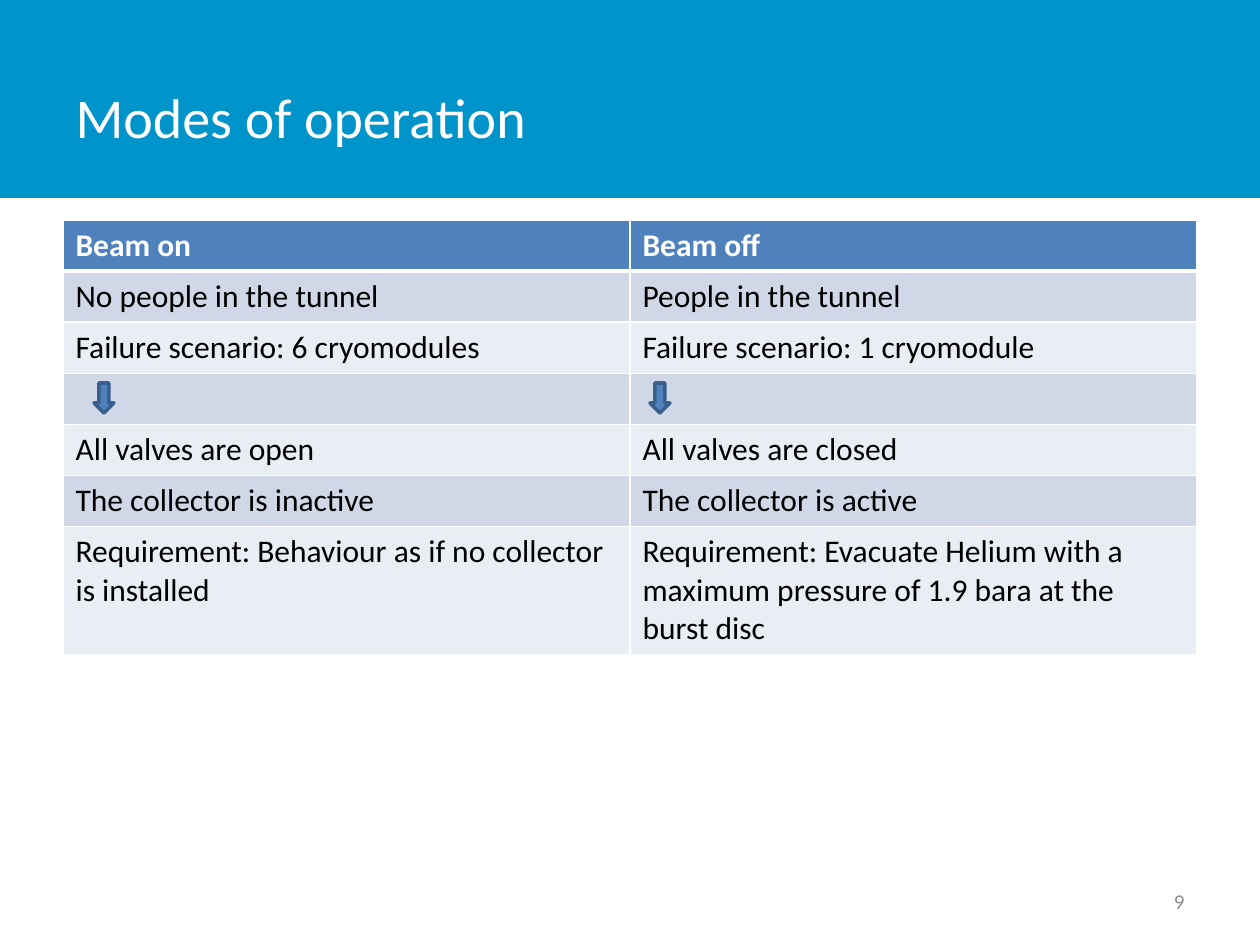
from lxml.etree import SubElement
from pptx import Presentation
from pptx.dml.color import RGBColor
from pptx.enum.shapes import MSO_SHAPE as Shape
from pptx.enum.text import MSO_ANCHOR as Anchor, PP_ALIGN as Align
from pptx.oxml.ns import qn
from pptx.util import Pt

# Content
TITLE = "Modes of operation"
PAGE_NUMBER = "9"
MODES = [
    ("Beam on", "Beam off"),
    ("No people in the tunnel", "People in the tunnel"),
    ("Failure scenario: 6 cryomodules", "Failure scenario: 1 cryomodule"),
    ("", ""),
    ("All valves are open", "All valves are closed"),
    ("The collector is inactive", "The collector is active"),
    ("Requirement: Behaviour as if no collector is installed",
     "Requirement: Evacuate Helium with a maximum pressure of 1.9 bara at the burst disc"),
]
COLORS = {"band": "0094CA", "white": "FFFFFF", "black": "000000", "head": "4F81BD",
          "odd": "D0D8E8", "even": "E9EDF4", "arrow_line": "3A5F8C", "page": "8C8C8C"}
FONT = "Calibri"

# Layout in px, 126 to the inch
EMU_PER_PX = 914400 // 126
SLIDE_W, SLIDE_H = 1260, 945
TABLE_X, TABLE_Y, COLUMN_W, ROW_H, LAST_ROW_H = 63, 220, 567, 51, 128
ARROW_LEFTS, ARROW_Y, ARROW_W, ARROW_H = (94, 650), 383, 20, 30


def px(*lengths):
    return [round(length * EMU_PER_PX) for length in lengths]


def color(name):
    return RGBColor.from_string(COLORS[name])


def write(frame, text, size, color_name, bold=False, align=Align.LEFT):
    paragraph = frame.paragraphs[0]
    paragraph.alignment = align
    run = paragraph.add_run()
    run.text = text
    run.font.name, run.font.size, run.font.bold = FONT, Pt(size), bold
    run.font.color.rgb = color(color_name)


def add_filled(shapes, kind, box, fill):
    shape = shapes.add_shape(kind, *px(*box))
    shape.shadow.inherit = False
    shape.fill.solid()
    shape.fill.fore_color.rgb = color(fill)
    return shape


def set_borders(cell, top, bottom):
    properties = cell._tc.get_or_add_tcPr()
    for side, width in (("L", 1), ("R", 1), ("T", top), ("B", bottom)):
        line = SubElement(properties, qn(f"a:ln{side}"), w=str(Pt(width)))
        fill = SubElement(line, qn("a:solidFill"))
        SubElement(fill, qn("a:srgbClr"), val=COLORS["white"])


deck = Presentation()
deck.slide_width, deck.slide_height = px(SLIDE_W, SLIDE_H)
slide = deck.slides.add_slide(deck.slide_layouts[5])
shapes = slide.shapes

# Title band, behind the title
band = add_filled(shapes, Shape.RECTANGLE, (0, 0, SLIDE_W, 198), "band")
band.line.fill.background()
title = shapes.title
title._element.addprevious(band._element)
title.left, title.top, title.width, title.height = px(63, 38, 984, 157)
title.text_frame.vertical_anchor = Anchor.MIDDLE
write(title.text_frame, TITLE, 32, "white")

# Comparison table
row_heights = [ROW_H] * (len(MODES) - 1) + [LAST_ROW_H]
table = shapes.add_table(len(MODES), 2, *px(TABLE_X, TABLE_Y, 2 * COLUMN_W, sum(row_heights))).table
for column in table.columns:
    column.width = px(COLUMN_W)[0]
for r, texts in enumerate(MODES):
    table.rows[r].height = px(row_heights[r])[0]
    header = r == 0
    for c, text in enumerate(texts):
        cell = table.cell(r, c)
        set_borders(cell, top=3 if r == 1 else 1, bottom=3 if header else 1)
        cell.fill.solid()
        cell.fill.fore_color.rgb = color("head" if header else "odd" if r % 2 else "even")
        if text:
            write(cell.text_frame, text, 18, "white" if header else "black", header)

# Page number
page = shapes.add_textbox(*px(903, 876, 294, 50)).text_frame
page.word_wrap = True
page.vertical_anchor = Anchor.MIDDLE
write(page, PAGE_NUMBER, 12, "page", align=Align.RIGHT)

# Arrows in the empty row
for left in ARROW_LEFTS:
    arrow = add_filled(shapes, Shape.DOWN_ARROW, (left, ARROW_Y, ARROW_W, ARROW_H), "head")
    arrow.line.color.rgb = color("arrow_line")
    arrow.line.width = Pt(2)

deck.save("out.pptx")
